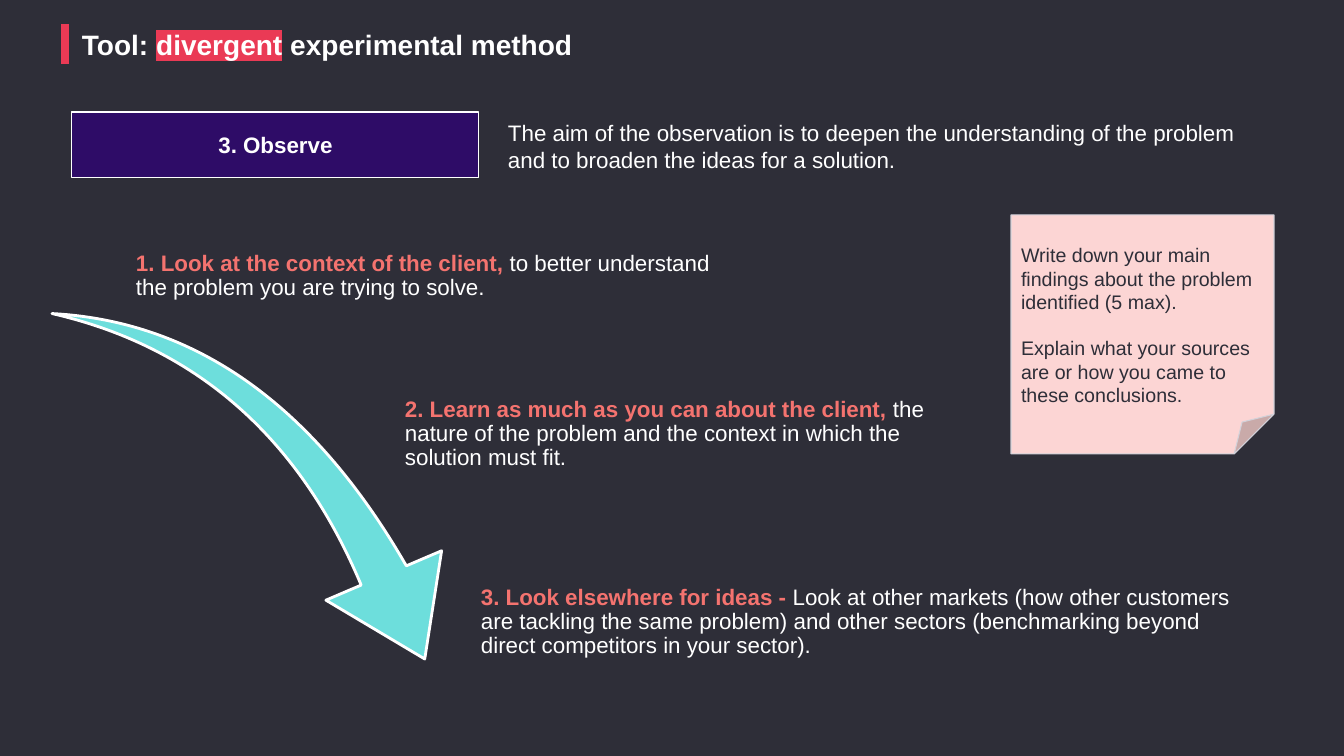
"""Build the slide on the observation step of the divergent experimental method."""
from dataclasses import dataclass

from lxml.etree import SubElement
from pptx import Presentation
from pptx.dml.color import RGBColor
from pptx.enum.shapes import MSO_CONNECTOR, MSO_SHAPE
from pptx.enum.text import MSO_ANCHOR, PP_ALIGN
from pptx.oxml import parse_xml
from pptx.oxml.ns import nsdecls, qn
from pptx.util import Pt


@dataclass(frozen=True)
class Theme:
    """Hold the colours, font and type sizes of the slide."""
    dark: str = "2E2E38"
    white: str = "FFFFFF"
    accent: str = "EA3A55"
    lead: str = "F4736F"
    purple: str = "2E0C67"
    teal: str = "6DDEDC"
    pink: str = "FCD5D4"
    grey: str = "D2D2DA"
    font: str = "Arial"
    title: int = 20
    body: int = 16
    note: int = 14


THEME = Theme()


def px(n):
    """Turn pixels into EMU at 100.8 pixels to the inch."""
    return round(n * 914400 / 100.8)


def rgb(code):
    """Return the colour for a hex code."""
    return RGBColor.from_string(code)


def set_frame(tf, insets=(10, 5, 10, 5), anchor=MSO_ANCHOR.TOP):
    """Wrap a text frame and set its insets and anchor."""
    tf.word_wrap = True
    tf.vertical_anchor = anchor
    tf.margin_left, tf.margin_top, tf.margin_right, tf.margin_bottom = map(px, insets)


def add_run(p, text, size=THEME.body, color=THEME.white, bold=False, highlight=None):
    """Add one styled run to a paragraph."""
    r = p.add_run()
    r.text = text
    r.font.size = Pt(size)
    r.font.bold = bold
    r.font.color.rgb = rgb(color)
    r.font.name = THEME.font
    if highlight:
        fill = r.font._element.find(qn("a:solidFill"))
        fill.addnext(parse_xml(
            f'<a:highlight {nsdecls("a")}><a:srgbClr val="{highlight}"/></a:highlight>'))


def add_text(s, box, **frame):
    """Add a text box and return its first paragraph."""
    tf = s.shapes.add_textbox(*map(px, box)).text_frame
    set_frame(tf, **frame)
    return tf.paragraphs[0]


def add_panel(s, kind, box, fill, line, width=0.75):
    """Add a filled and outlined preset shape."""
    sp = s.shapes.add_shape(kind, *map(px, box))
    sp.shadow.inherit = False
    sp.fill.solid()
    sp.fill.fore_color.rgb = rgb(fill)
    sp.line.color.rgb = rgb(line)
    sp.line.width = Pt(width)
    return sp


def add_title(s):
    """Add the accent bar and the title."""
    bar = s.shapes.add_connector(MSO_CONNECTOR.STRAIGHT, px(65), px(24), px(65), px(64))
    bar.line.color.rgb = rgb(THEME.accent)
    bar.line.width = Pt(6)
    SubElement(bar._element.spPr, qn("a:effectLst"))
    p = add_text(s, (72, 22, 784, 44))
    for text, highlight in (("Tool: ", None), ("divergent", THEME.accent),
                            (" experimental method", None)):
        add_run(p, text, THEME.title, bold=True, highlight=highlight)


def add_stage(s, name, aim):
    """Add the stage label and its aim."""
    sp = add_panel(s, MSO_SHAPE.RECTANGLE, (72, 112, 407, 66), THEME.purple, THEME.white)
    set_frame(sp.text_frame, anchor=MSO_ANCHOR.MIDDLE)
    p = sp.text_frame.paragraphs[0]
    p.alignment = PP_ALIGN.CENTER
    add_run(p, name, bold=True)
    add_run(add_text(s, (498, 114, 784, 65)), aim)


def add_arrow(s):
    """Add the swoosh that leads from the first step to the last."""
    sp = add_panel(s, MSO_SHAPE.SWOOSH_ARROW, (42, 327, 438, 305), THEME.teal, THEME.white, 2)
    sp.adjustments[0] = 0.16
    sp.adjustments[1] = 0.31
    sp.rotation = 73.3


def add_step(s, box, anchor, lead, text):
    """Add one step with a coloured lead."""
    p = add_text(s, box, insets=(2, 2, 2, 2), anchor=anchor)
    p.line_spacing = 0.9
    add_run(p, lead, color=THEME.lead, bold=True)
    add_run(p, text)


def add_note(s, texts):
    """Add the folded note, one paragraph per text."""
    sp = add_panel(s, MSO_SHAPE.FOLDED_CORNER, (1011, 215, 263, 239), THEME.pink, THEME.grey)
    tf = sp.text_frame
    set_frame(tf, insets=(10, 28, 10, 5))
    for i, text in enumerate(texts):
        p = tf.add_paragraph() if i else tf.paragraphs[0]
        p.alignment = PP_ALIGN.LEFT
        if i:
            p.space_before = Pt(16)
        add_run(p, text, THEME.note, THEME.dark)


def main():
    """Build and save the slide."""
    prs = Presentation()
    prs.slide_width, prs.slide_height = px(1344), px(756)
    s = prs.slides.add_slide(prs.slide_layouts[6])
    s.background.fill.solid()
    s.background.fill.fore_color.rgb = rgb(THEME.dark)
    add_title(s)
    add_stage(s, "3. Observe",
              "The aim of the observation is to deepen the understanding of the problem "
              "and to broaden the ideas for a solution.")
    add_arrow(s)
    steps = (
        ((134, 237, 608, 79), MSO_ANCHOR.MIDDLE, "1. Look at the context of the client, ",
         "to better understand the problem you are trying to solve."),
        ((403, 396, 537, 79), MSO_ANCHOR.TOP, "2. Learn as much as you can about the client, ",
         "the nature of the problem and the context in which the solution must fit."),
        ((479, 584, 774, 79), MSO_ANCHOR.TOP, "3. Look elsewhere for ideas - ",
         "Look at other markets (how other customers are tackling the same problem) and "
         "other sectors (benchmarking beyond direct competitors in your sector)."),
    )
    for step in steps:
        add_step(s, *step)
    add_note(s, ("Write down your main findings about the problem identified (5 max).",
                 "Explain what your sources are or how you came to these conclusions."))
    prs.save("out.pptx")


if __name__ == "__main__":
    main()
